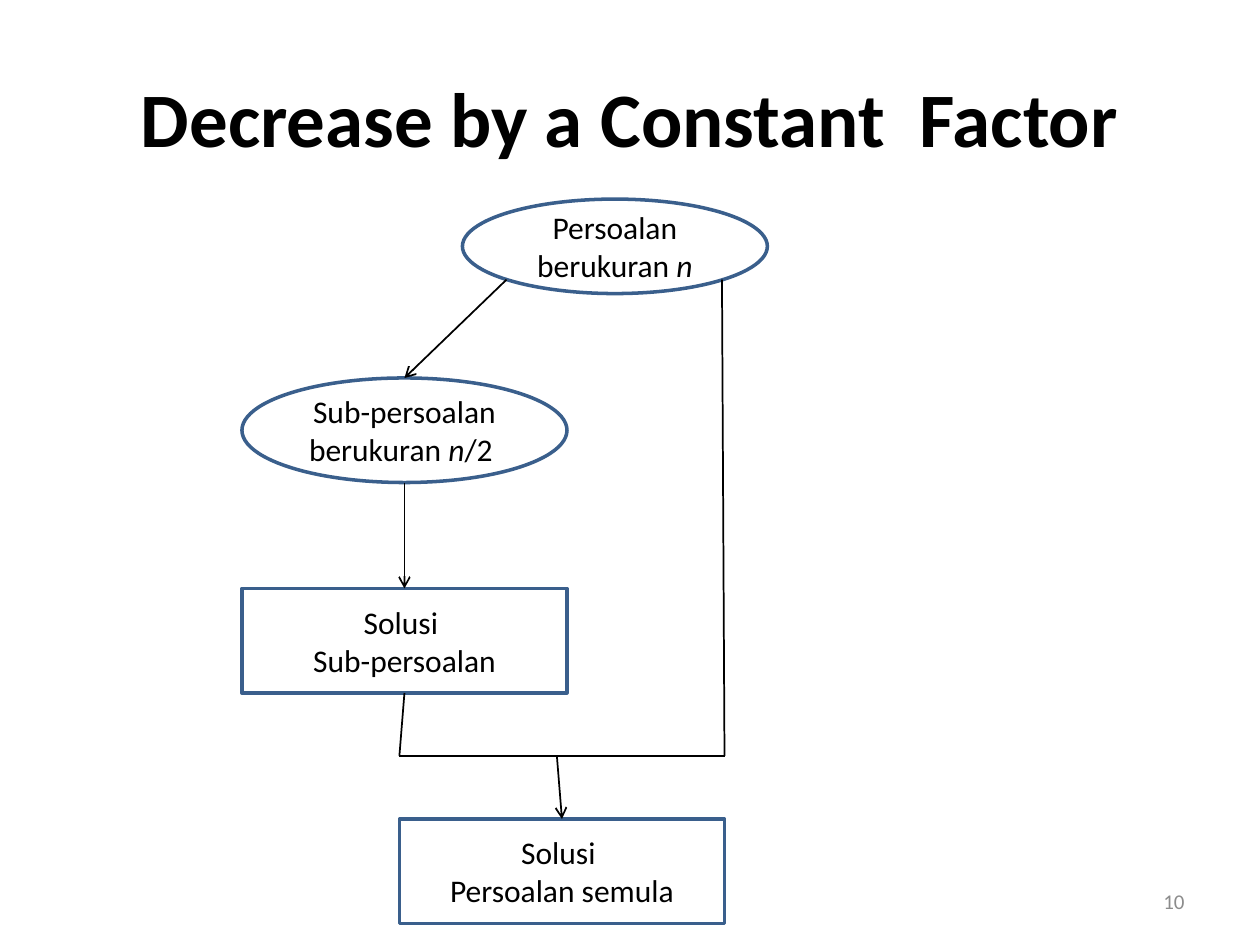
from lxml.etree import SubElement
from pptx import Presentation
from pptx.dml.color import RGBColor
from pptx.enum.shapes import MSO_CONNECTOR as Connector, MSO_SHAPE as Shape
from pptx.enum.text import MSO_ANCHOR as Anchor, PP_ALIGN as Align
from pptx.oxml.ns import qn
from pptx.util import Inches, Pt

BLACK = RGBColor(0x00, 0x00, 0x00)
WHITE = RGBColor(0xFF, 0xFF, 0xFF)
GREY = RGBColor(0x8C, 0x8C, 0x8C)
BLUE = RGBColor(0x3A, 0x5F, 0x8C)
FONT = "Calibri"
TOP, BOTTOM = 0, 2
NODE_WIDTH, NODE_HEIGHT = 2.58, 0.83


def write(box, paragraphs, size=18, color=BLACK, align=Align.CENTER, bold=False):
    """Fill a box with paragraphs, each a list of runs; the run "n" is italic."""
    frame = box.text_frame
    frame.word_wrap = True
    frame.vertical_anchor = Anchor.MIDDLE
    for index, spans in enumerate(paragraphs):
        para = frame.add_paragraph() if index else frame.paragraphs[0]
        para.alignment = align
        for text in spans:
            span = para.add_run()
            span.text = text
            font = span.font
            font.name, font.size, font.bold = FONT, Pt(size), bold
            font.italic = text == "n"
            font.color.rgb = color


def add_text(page, left, top, width, height, text, **style):
    box = page.shapes.add_textbox(*map(Inches, (left, top, width, height)))
    write(box, [[text]], **style)


def add_node(page, kind, left, top, paragraphs, width=NODE_WIDTH, height=NODE_HEIGHT):
    node = page.shapes.add_shape(kind, *map(Inches, (left, top, width, height)))
    node.shadow.inherit = False
    node.fill.solid()
    node.fill.fore_color.rgb = WHITE
    node.line.color.rgb = BLUE
    node.line.width = Pt(2)
    write(node, paragraphs)
    return node


def add_line(page, start, end, arrow=False):
    line = page.shapes.add_connector(Connector.STRAIGHT, *map(Inches, start + end))
    line.line.color.rgb = BLACK
    line.line.width = Pt(1)
    if arrow:
        SubElement(line.line._get_or_add_ln(), qn("a:tailEnd"), type="arrow")
    SubElement(line._element.spPr, qn("a:effectLst"))
    return line


def add_flowchart(page, left, top):
    """Draw the decomposition, with its left column at left and its top at top."""
    merged_left = left + 1.25
    center = left + NODE_WIDTH / 2
    sub_top, solved_top, join, merged_top = (
        top + offset for offset in (1.42, 3.09, 4.42, 4.92))
    problem_foot = top + 0.64
    merged_right = merged_left + NODE_WIDTH

    add_node(page, Shape.OVAL, left + 1.75, top,
             [["Persoalan berukuran ", "n"]], width=2.42, height=0.75)
    sub_problem = add_node(page, Shape.OVAL, left, sub_top,
                           [["Sub-persoalan berukuran ", "n", "/2 "]])
    sub_solution = add_node(page, Shape.RECTANGLE, left, solved_top,
                            [["Solusi "], ["Sub-persoalan"]])
    solution = add_node(page, Shape.RECTANGLE, merged_left, merged_top,
                        [["Solusi "], ["Persoalan semula"]])

    split = add_line(page, (left + 2.1, problem_foot), (center, sub_top), arrow=True)
    split.end_connect(sub_problem, TOP)
    solve = add_line(page, (center, sub_top + NODE_HEIGHT), (center, solved_top), arrow=True)
    solve.end_connect(sub_solution, TOP)
    collect = add_line(page, (center, solved_top + NODE_HEIGHT), (merged_left, join))
    collect.begin_connect(sub_solution, BOTTOM)
    add_line(page, (merged_left, join), (merged_right, join))
    add_line(page, (merged_right, join), (left + 3.81, problem_foot))
    merge = add_line(page, (merged_left + 1.25, join),
                     (merged_left + NODE_WIDTH / 2, merged_top), arrow=True)
    merge.end_connect(solution, TOP)


def main():
    deck = Presentation()
    deck.slide_width, deck.slide_height = Inches(10), Inches(7.5)
    page = deck.slides.add_slide(deck.slide_layouts[6])
    add_text(page, 0.5, 0.3, 9, 1.25, "Decrease by a Constant  Factor", size=44, bold=True)
    add_flowchart(page, 1.92, 1.58)
    add_text(page, 7.17, 6.95, 2.33, 0.4, "10", size=12, color=GREY, align=Align.RIGHT)
    deck.save("out.pptx")


if __name__ == "__main__":
    main()
